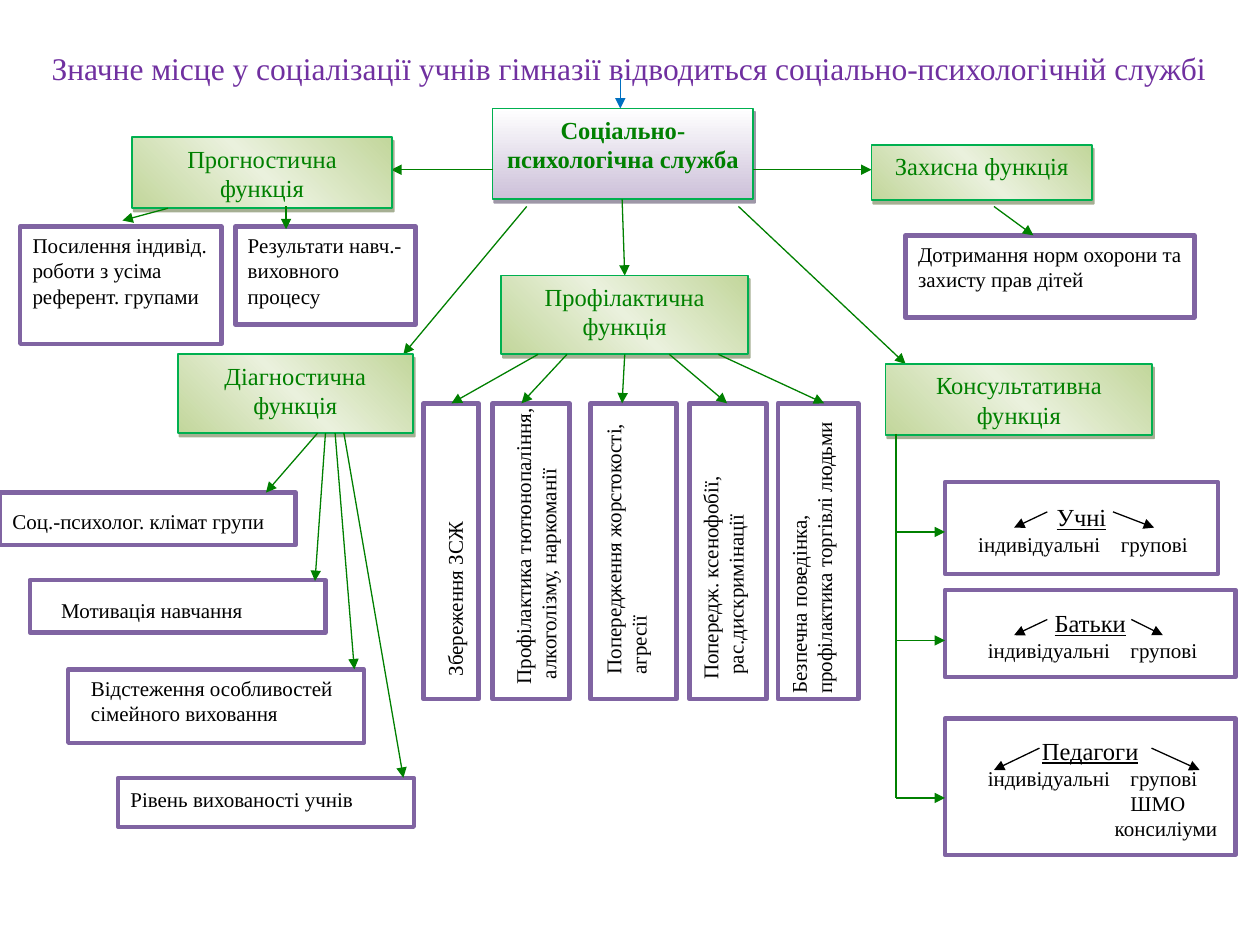
import pptx
import pptx.util
import pptx.dml.color
import pptx.enum.shapes
import pptx.enum.text
import pptx.oxml.ns
import lxml.etree

Pt = pptx.util.Pt
qn = pptx.oxml.ns.qn
ALIGN = pptx.enum.text.PP_ALIGN
MID = pptx.enum.text.MSO_ANCHOR.MIDDLE
TOP = pptx.enum.text.MSO_ANCHOR.TOP
HUES = {
    "white": "FFFFFF", "black": "000000", "green": "008000", "edge": "00B050",
    "leaf": "C2D69B", "pale": "EAF1DD", "moss": "4E6128", "lilac": "CCC0D9",
    "plum": "3F3151", "frame": "8064A2", "title": "7030A0", "blue": "0070C0",
}


def hue(name):
    return pptx.dml.color.RGBColor.from_string(HUES[name])


def sub(node, tag, **attrs):
    child = lxml.etree.SubElement(node, qn(tag))
    for key, val in attrs.items():
        child.set(key, str(val))
    return child


def write(frame, text, size=12, ink="black", bold=False, under=False,
          align=ALIGN.LEFT, tabs=(), indent=0):
    """Add one paragraph, using the empty first one if there is one."""
    para = frame.paragraphs[0]
    if para.runs:
        para = frame.add_paragraph()
    para.alignment = align
    props = para._p.get_or_add_pPr()
    if indent:
        props.set("marL", str(Pt(indent)))
    if tabs:
        stops = sub(props, "a:tabLst")
        for stop in tabs:
            sub(stops, "a:tab", pos=Pt(stop), algn="l")
    run = para.add_run()
    run.text = text
    font = run.font
    font.name, font.size, font.bold = "Times New Roman", Pt(size), bold
    font.underline = under
    font.color.rgb = hue(ink)


def setup(frame, anchor=TOP, pad=(7.2, 3.6, 7.2, 3.6)):
    frame.word_wrap = True
    frame.vertical_anchor = anchor
    (frame.margin_left, frame.margin_top,
     frame.margin_right, frame.margin_bottom) = map(Pt, pad)
    return frame


def rect(slide, x, y, w, h, edge, width):
    shape = slide.shapes.add_shape(
        pptx.enum.shapes.MSO_SHAPE.RECTANGLE, Pt(x), Pt(y), Pt(w), Pt(h))
    shape.shadow.inherit = False
    shape.line.color.rgb = hue(edge)
    shape.line.width = Pt(width)
    return shape


def note(slide, x, y, w, h, lines=(), **look):
    """White box with a violet border; returns its text frame."""
    shape = rect(slide, x, y, w, h, "frame", 2.5)
    shape.fill.solid()
    shape.fill.fore_color.rgb = hue("white")
    frame = setup(shape.text_frame, **look)
    for line in lines:
        write(frame, line)
    return frame


def card(slide, x, y, w, h, text, stops=("leaf", "pale", "leaf"),
         angle=45, shade="moss", bold=False):
    """Gradient box with a shadow, for a service or a function."""
    shape = rect(slide, x, y, w, h, "edge", 1)
    shape.fill.gradient()
    shape.fill.gradient_angle = angle
    props = shape._element.spPr
    ramp = next(props.iter(qn("a:gsLst")))
    for stop in list(ramp):
        ramp.remove(stop)
    for i, name in enumerate(stops):
        stop = sub(ramp, "a:gs", pos=100000 * i // (len(stops) - 1))
        sub(stop, "a:srgbClr", val=HUES[name])
    cast = sub(props.find(qn("a:effectLst")), "a:outerShdw", blurRad=0,
               dist=Pt(2.2), dir=63 * 60000, algn="ctr", rotWithShape=0)
    sub(sub(cast, "a:srgbClr", val=HUES[shade]), "a:alpha", val=50000)
    write(setup(shape.text_frame), text, size=14, ink="green", bold=bold,
          align=ALIGN.CENTER)


def arrow(slide, x1, y1, x2, y2, ink="green", head=True):
    line = slide.shapes.add_connector(
        pptx.enum.shapes.MSO_CONNECTOR.STRAIGHT, Pt(x1), Pt(y1), Pt(x2), Pt(y2))
    line.line.color.rgb = hue(ink)
    line.line.width = Pt(0.75)
    if head:
        sub(line.line._get_or_add_ln(), "a:tailEnd", type="triangle")
    sub(line._element.spPr, "a:effectLst")


def label(slide, x, y, w, h, **look):
    box = slide.shapes.add_textbox(Pt(x), Pt(y), Pt(w), Pt(h))
    setup(box.text_frame, anchor=MID, **look)
    return box


def title(slide, x, y, w, h):
    frame = label(slide, x, y, w, h).text_frame
    write(frame, "Значне місце у соціалізації учнів гімназії відводиться "
          "соціально-психологічній службі", size=18, ink="title",
          align=ALIGN.CENTER)


def centre(slide, x, y, w, h):
    card(slide, x, y, w, h, "Соціально-психологічна служба",
         stops=("white", "lilac"), angle=270, shade="plum", bold=True)
    arrow(slide, x + 73, y - 17.5, x + 73, y, ink="blue")
    for x1, y1, x2, y2 in [(w, 35, 216.5, 35), (0, 35, -58, 35),
                           (19.5, 56, -51, 140.5), (74, h, 75.5, 95.5),
                           (140.5, 56, 236, 146)]:
        arrow(slide, x + x1, y + y1, x + x2, y + y2)


def forecast(slide, x, y, w, h):
    card(slide, x + 64, y, 148.5, 40.5, "Прогностична функція")
    note(slide, x, y + 51, 115, h - 51,
         ["Посилення індивід. роботи з усіма референт. групами"])
    note(slide, x + w - 103, y + 51, 103, 56,
         ["Результати навч.-виховного процесу"])
    arrow(slide, x + 84.5, y + 40.5, x + 58.5, y + 47.5)
    arrow(slide, x + 152, y + 39.5, x + 152, y + 52.5)


def protect(slide, x, y, w, h):
    card(slide, x, y, 126, 31.5, "Захисна функція")
    note(slide, x + w - 165, y + h - 47, 165, 47,
         ["Дотримання норм охорони та захисту прав дітей"])
    arrow(slide, x + 70, y + 35, x + 92.5, y + h - 47)


def diagnose(slide, x, y, w, h):
    card(slide, x + 101.5, y, 134.5, 45, "Діагностична функція")
    goals = [
        (0, 79, 30, 7.2, 2, ["Соц.-психолог. клімат групи"]),
        (17, 129, 30, 18, 4, ["Мотивація навчання"]),
        (39, 180, 42, 13, -6, ["Відстеження особливостей",
                               "сімейного виховання"]),
        (67.5, 242, 28, 7.2, -4, ["Рівень вихованості учнів"]),
    ]
    for left, top, tall, inset, drop, lines in goals:
        note(slide, x + left, y + top, 169, tall, lines, anchor=MID,
             pad=(inset, max(drop, 0), 0, max(-drop, 0)))
    for x1, x2, y2 in [(181.5, 152, 79), (186, 180, 129.5),
                       (191.5, 202.5, 180), (196.5, 230.5, 242)]:
        arrow(slide, x + x1, y + 45, x + x2, y + y2)


def prevent(slide, x, y, w, h):
    card(slide, x + 44.5, y, 141, 45, "Профілактична функція")
    top, tall, deep = y + 73, h - 73, 36
    # left, width, arrow start and end, text shift, text inset, indent, lines
    goals = [
        (0, 31.5, 65.5, 16, 2, 13, 0, ["Збереження ЗСЖ"]),
        (39.5, 44, 82, 56, 2.5, 8.5, 3, ["Профілактика тютюнопаління,",
                                         "алкоголізму, наркоманії"]),
        (95.5, 49, 115, 113.5, -4.5, 14, 0, ["Попередження жорстокості,",
                                             "агресії"]),
        (152, 44, 140.5, 173.5, -3, 11, 3, ["Попередж. ксенофобії,",
                                            "рас.дискримінації"]),
        (202.5, 46, 168.5, 229, -4, 3, 0, ["Безпечна поведінка,",
                                           "профілактика торгівлі людьми"]),
    ]
    for left, wide, x1, x2, shift, inset, indent, lines in goals:
        note(slide, x + left, top, wide, tall)
        mid = x + left + wide / 2 + shift
        box = label(slide, mid - tall / 2, top + (tall - deep) / 2, tall, deep,
                    pad=(inset, 0, 0, 0))
        box.rotation = 270
        for i, line in enumerate(lines):
            write(box.text_frame, line, indent=indent * i)
        arrow(slide, x + x1, y + 45, x + x2, top)


def consult(slide, x, y, w, h):
    card(slide, x, y, 152.5, 40.5, "Консультативна функція")
    trunk, left = x + 6, x + 34
    arrow(slide, trunk, y + 40, trunk, y + 248, head=False)
    # top, size, branch, tab stops, arrow ends, name, extra lines
    groups = [
        (67.5, 156, 52.5, 96, (19, 100.5), (58.5, 39.5, 96, 119.5), 26,
         "Учні", []),
        (129, 166, 50, 158, (24.5, 106), (58.5, 39.5, 106.5, 124.5), 26,
         "Батьки", []),
        (202.5, 166, 78, 248, (24.5, 106), (54, 28, 118, 145.5), 29.5,
         "Педагоги", [("ШМО", 106), ("консиліуми", 97)]),
    ]
    for top, wide, tall, branch, tabs, ends, low, name, extra in groups:
        frame = note(slide, left, y + top, wide, tall, anchor=MID,
                     pad=(0, 2, 0, 0))
        write(frame, name, size=14, under=True, align=ALIGN.CENTER)
        write(frame, "\tіндивідуальні\tгрупові", tabs=tabs)
        for line, stop in extra:
            write(frame, line, indent=stop)
        arrow(slide, trunk, y + branch, left, y + branch)
        for x1, x2 in (ends[:2], ends[2:]):
            arrow(slide, left + x1, y + top + 17, left + x2, y + top + low,
                  ink="black")


def main():
    deck = pptx.Presentation()
    deck.slide_width, deck.slide_height = Pt(720), Pt(540)
    slide = deck.slides.add_slide(deck.slide_layouts[6])
    title(slide, 16.5, 24.5, 686, 29)
    centre(slide, 281.5, 62, 149, 52)
    forecast(slide, 11.5, 78.5, 226, 118)
    protect(slide, 498, 83, 184.5, 98.5)
    diagnose(slide, 0, 202.5, 236.5, 270)
    prevent(slide, 242, 157.5, 248.5, 242)
    consult(slide, 506, 208, 200, 280.5)
    deck.save("out.pptx")


if __name__ == "__main__":
    main()
